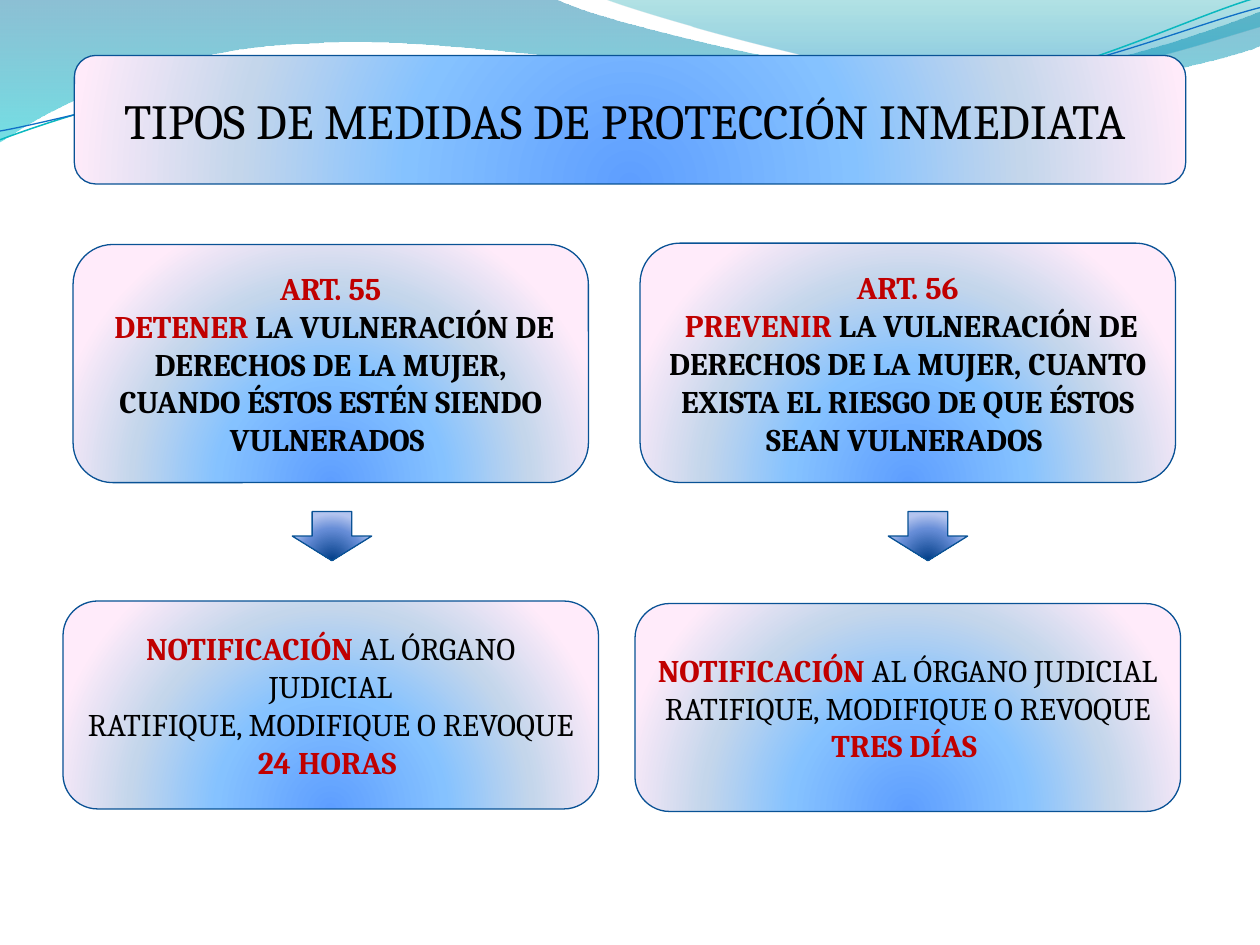
from math import cos, radians, sin

from pptx import Presentation
from pptx.dml.color import RGBColor
from pptx.enum.shapes import MSO_SHAPE
from pptx.enum.text import MSO_ANCHOR, MSO_AUTO_SIZE, PP_ALIGN
from pptx.oxml import parse_xml
from pptx.oxml.ns import qn
from pptx.util import Inches, Pt

NAMESPACE = 'xmlns:a="http://schemas.openxmlformats.org/drawingml/2006/main"'
RED, BLACK, OUTLINE = "C00000", "000000", "095295"
PANEL_STOPS = [(0, "5E9EFF"), (40, "85C2FF"), (70, "C4D6EB"), (100, "FFEBFA")]
ARROW_STOPS = [(0, "003D87"), (68, "668DD7"), (100, "B3C4EF")]
LINEAR = '<a:lin ang="5400000" scaled="0"/>'
RADIAL = ('<a:path path="circle"><a:fillToRect l="50000" t="130000" '
          'r="50000" b="-30000"/></a:path>')


def color(code):
    return RGBColor.from_string(code)


def set_gradient(shape, stops, direction):
    """Fill with (position, colour[, opacity]) stops, all in percent."""
    shape.fill.gradient()
    old = shape.element.spPr.find(qn("a:gradFill"))
    marks = ""
    for position, code, *opacity in stops:
        alpha = f'<a:alpha val="{opacity[0] * 1000}"/>' if opacity else ""
        marks += (f'<a:gs pos="{position * 1000}">'
                  f'<a:srgbClr val="{code}">{alpha}</a:srgbClr></a:gs>')
    new = parse_xml(f'<a:gradFill {NAMESPACE} rotWithShape="1">'
                    f'<a:gsLst>{marks}</a:gsLst>{direction}</a:gradFill>')
    old.getparent().replace(old, new)


def set_outline(shape, code=OUTLINE, width=0.75):
    shape.line.color.rgb = color(code)
    shape.line.width = Pt(width)


def write(para, text, size=18, code=BLACK, bold=False):
    span = para.add_run()
    span.text = text
    span.font.name = "Cambria"
    span.font.size = Pt(size)
    span.font.bold = bold
    span.font.color.rgb = color(code)


def prepare_frame(shape):
    frame = shape.text_frame
    frame.word_wrap = True
    frame.auto_size = MSO_AUTO_SIZE.NONE
    frame.vertical_anchor = MSO_ANCHOR.MIDDLE
    return frame


def add_curve(page, box, steps, turn=0):
    """Draw (command, points) steps, given in slide inches after turning."""
    left, top, width, height = box
    middle_x, middle_y = left + width / 2, top + height / 2
    angle = radians(-turn)

    def mark(x, y):
        x, y = x - middle_x, y - middle_y
        across = x * cos(angle) - y * sin(angle) + width / 2
        down = x * sin(angle) + y * cos(angle) + height / 2
        return f'<a:pt x="{Inches(across)}" y="{Inches(down)}"/>'

    drawn = "".join(f"<a:{command}>{''.join(mark(*point) for point in points)}</a:{command}>"
                    for command, points in steps)
    shape = page.shapes.build_freeform(Inches(left), Inches(top), scale=1.0)
    shape.add_line_segments([(Inches(left + width), Inches(top + height))], close=False)
    shape = shape.convert_to_shape()
    shape.shadow.inherit = False
    shape.rotation = turn
    paths = shape.element.spPr.find(qn("a:custGeom")).find(qn("a:pathLst"))
    paths.replace(paths[0], parse_xml(
        f'<a:path {NAMESPACE} w="{Inches(width)}" h="{Inches(height)}">{drawn}</a:path>'))
    return shape


def curves(*points):
    return [("cubicBezTo", points[i:i + 3]) for i in range(0, len(points), 3)]


def add_waves(page):
    wide = [("moveTo", [(0, 0)]), ("lnTo", [(4.4, -0.01)]),
            *curves((4.76, 0.17), (6.64, 0.63), (7.58, 0.63),
                    (8.53, 0.63), (9.58, 0.26), (10, 0.09)),
            ("lnTo", [(10.01, 0.36)]),
            *curves((9.83, 0.44), (8.7, 0.76), (7.46, 0.75),
                    (6.22, 0.75), (3.82, 0.28), (2.57, 0.34),
                    (1.29, 0.36), (0.46, 0.83), (-0.01, 1.13)),
            ("lnTo", [(0, 0)]), ("close", [])]
    crest = [("moveTo", [(4.79, -0.01)]),
             *curves((5.09, 0.11), (6.82, 0.62), (7.69, 0.65),
                     (8.56, 0.69), (9.61, 0.32), (10, 0.21)),
             ("lnTo", [(10, 0)]), ("lnTo", [(4.79, -0.01)]), ("close", [])]
    bands = [((-0.01, -0.01, 10.02, 1.14), wide, [(0, "0074A1", 45), (100, "00C6CF", 55)]),
             ((4.79, -0.01, 5.21, 0.7), crest, [(0, "00A1A9", 30), (80, "008BBF", 45)])]
    for box, steps, stops in bands:
        band = add_curve(page, box, steps)
        set_gradient(band, stops, LINEAR)
        band.line.fill.background()

    upper = [("moveTo", [(0, 1.11)]),
             *curves((0.48, 0.93), (1.58, 0.57), (2.77, 0.52),
                     (3.95, 0.47), (5.93, 0.89), (7.13, 0.8),
                     (8.33, 0.71), (9.38, 0.15), (9.98, -0.02))]
    lower = [("moveTo", [(0, 1.04)]),
             *curves((0.47, 0.96), (1.64, 0.61), (2.83, 0.56),
                     (4.03, 0.51), (5.97, 0.84), (7.17, 0.75),
                     (8.36, 0.67), (9.41, 0.21), (10, 0.06))]
    strands = [((-0.02, 0.22, 10.02, 0.71), upper, "0AB8BF", 0.85),
               ((-0.02, 0.3, 10.03, 0.58), lower, "0F6FC6", 0.75)]
    for box, steps, code, width in strands:
        strand = add_curve(page, box, steps, turn=357.3)
        strand.fill.background()
        set_outline(strand, code, width)


def add_preset(page, kind, box, stops):
    shape = page.shapes.add_shape(kind, *map(Inches, box))
    shape.shadow.inherit = False
    set_gradient(shape, stops, RADIAL)
    set_outline(shape)
    return shape


def add_title(page, box, text):
    add_preset(page, MSO_SHAPE.ROUNDED_RECTANGLE, box, PANEL_STOPS)
    title = page.shapes.title
    title.element.getparent().append(title.element)  # in front of its panel
    title.left, title.top, title.width, title.height = map(Inches, box)
    para = prepare_frame(title).paragraphs[0]
    para.alignment = PP_ALIGN.CENTER
    write(para, text, size=28)


def add_panel(page, box, lines):
    """Each line is a list of (text, format) pairs."""
    panel = add_preset(page, MSO_SHAPE.ROUNDED_RECTANGLE, box, PANEL_STOPS)
    frame = prepare_frame(panel)
    for index, line in enumerate(lines):
        para = frame.add_paragraph() if index else frame.paragraphs[0]
        para.alignment = PP_ALIGN.CENTER
        for text, style in line:
            write(para, text, **style)


def add_measure(page, measure_box, arrow_box, notice_box, article, verb, detail, term):
    strong, bold, plain = {"code": RED, "bold": True}, {"bold": True}, {}
    add_panel(page, measure_box, [[(article, strong)],
                                  [(f" {verb}", strong), (f" {detail} ", bold)]])
    add_preset(page, MSO_SHAPE.DOWN_ARROW, arrow_box, ARROW_STOPS)
    add_panel(page, notice_box, [[("NOTIFICACIÓN", strong), (" AL ÓRGANO JUDICIAL", plain)],
                                 [("RATIFIQUE, MODIFIQUE O REVOQUE", plain)],
                                 [(f"{term} ", strong)]])


def main():
    deck = Presentation()
    deck.slide_width, deck.slide_height = Inches(10), Inches(7.5)
    page = deck.slides.add_slide(deck.slide_layouts[5])
    add_waves(page)
    add_title(page, (0.59, 0.44, 8.82, 1.02), "TIPOS DE MEDIDAS DE PROTECCIÓN INMEDIATA ")
    add_measure(page, (0.58, 1.94, 4.09, 1.89), (2.32, 4.06, 0.63, 0.39),
                (0.5, 4.77, 4.25, 1.65), "ART. 55", "DETENER",
                "LA VULNERACIÓN DE DERECHOS DE LA MUJER, "
                "CUANDO ÉSTOS ESTÉN SIENDO VULNERADOS", "24 HORAS")
    add_measure(page, (5.08, 1.93, 4.25, 1.9), (7.05, 4.06, 0.63, 0.39),
                (5.04, 4.79, 4.33, 1.65), "ART. 56", "PREVENIR",
                "LA VULNERACIÓN DE DERECHOS DE LA MUJER, "
                "CUANTO EXISTA EL RIESGO DE QUE ÉSTOS SEAN VULNERADOS", "TRES DÍAS")
    deck.save("out.pptx")


if __name__ == "__main__":
    main()
